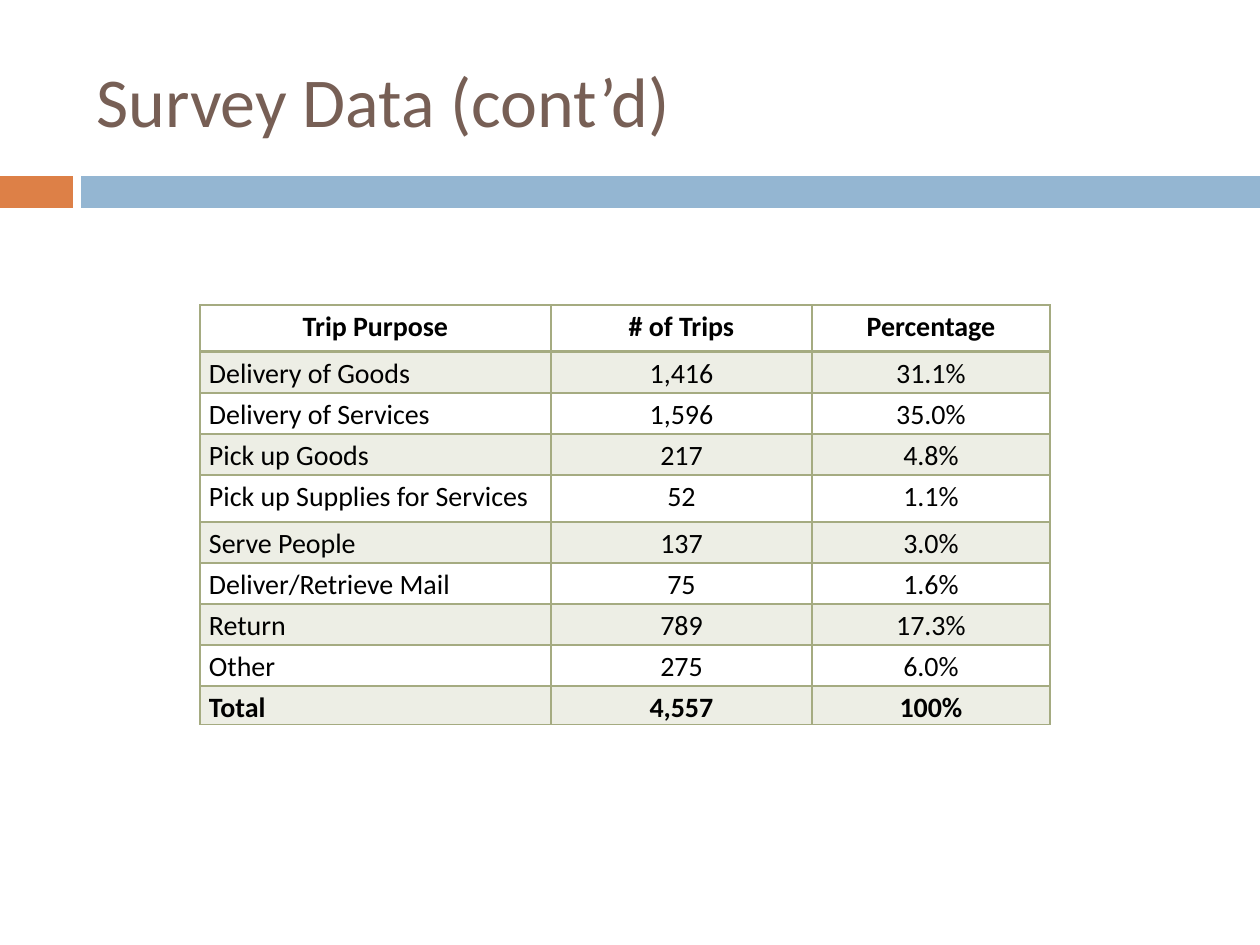
from lxml import etree
from pptx import Presentation
from pptx import util as u
from pptx.dml.color import RGBColor
from pptx.enum import shapes, text
from pptx.oxml import ns

PX_PER_INCH = 126
OLIVE = "A5AB81"
TRIPS = [
    ("Trip Purpose", "# of Trips", "Percentage"),
    ("Delivery of Goods", "1,416", "31.1%"),
    ("Delivery of Services", "1,596", "35.0%"),
    ("Pick up Goods", "217", "4.8%"),
    ("Pick up Supplies for Services", "52", "1.1%"),
    ("Serve People", "137", "3.0%"),
    ("Deliver/Retrieve Mail", "75", "1.6%"),
    ("Return", "789", "17.3%"),
    ("Other", "275", "6.0%"),
    ("Total", "4,557", "100%"),
]
COLUMN_WIDTHS = [351, 261, 238]
ROW_HEIGHTS = [47, 41, 41, 41, 47, 41, 41, 41, 41, 39]


def px(length):
    return u.Emu(round(length * 914400 / PX_PER_INCH))


def color(value):
    return RGBColor.from_string(value)


def assign(target, values):
    for name, value in values.items():
        setattr(target, name, value)


def write(frame, words, size, ink, frame_format, paragraph_format, bold=False):
    assign(frame, frame_format)
    paragraph = frame.paragraphs[0]
    assign(paragraph, paragraph_format)
    run = paragraph.add_run()
    run.text = words
    assign(run.font, {"name": "Calibri", "size": u.Pt(size), "bold": bold})
    run.font.color.rgb = color(ink)


def add_title(slide, left, top, width, height):
    title = slide.shapes.add_textbox(*map(px, (left, top, width, height)))
    write(title.text_frame, "Survey Data (cont’d)", 40, "775F55",
          {"word_wrap": True, "vertical_anchor": text.MSO_ANCHOR.MIDDLE},
          {"alignment": text.PP_ALIGN.LEFT})


def add_band(slide, left, top, width, height):
    accent_width, gap = 73, 8
    stripe_left = accent_width + gap
    stripes = [(0, accent_width, "DD8047"),
               (stripe_left, width - stripe_left, "94B6D2")]
    for offset, stripe_width, fill in stripes:
        stripe = slide.shapes.add_shape(
            shapes.MSO_SHAPE.RECTANGLE,
            *map(px, (left + offset, top, stripe_width, height)))
        stripe.shadow.inherit = False
        stripe.fill.solid()
        stripe.fill.fore_color.rgb = color(fill)
        stripe.line.fill.background()


def add_borders(cell, weights):
    properties = cell._tc.get_or_add_tcPr()
    for side, weight in weights.items():
        border = etree.SubElement(properties, ns.qn(f"a:ln{side}"),
                                  w=str(u.Pt(weight)))
        fill = etree.SubElement(border, ns.qn("a:solidFill"))
        etree.SubElement(fill, ns.qn("a:srgbClr"), val=OLIVE)


def shade(cell, banded):
    if not banded:
        cell.fill.background()
        return
    cell.fill.solid()
    cell.fill.fore_color.rgb = color(OLIVE)
    tint = cell._tc.tcPr.find(".//" + ns.qn("a:solidFill") + "[last()]")
    tint = cell._tc.tcPr.find(ns.qn("a:solidFill")).find(ns.qn("a:srgbClr"))
    etree.SubElement(tint, ns.qn("a:alpha"), val="20000")


def add_trip_table(slide, left, top):
    box = (left, top, sum(COLUMN_WIDTHS), sum(ROW_HEIGHTS))
    table = slide.shapes.add_table(
        len(TRIPS), len(COLUMN_WIDTHS), *map(px, box)).table
    assign(table, {"first_row": False, "horz_banding": False})
    for column, width in zip(table.columns, COLUMN_WIDTHS):
        column.width = px(width)
    for row, height in zip(table.rows, ROW_HEIGHTS):
        row.height = px(height)
    last = len(TRIPS) - 1
    for r, trip in enumerate(TRIPS):
        for c, words in enumerate(trip):
            cell = table.cell(r, c)
            assign(cell, {"margin_left": px(9), "margin_right": px(9),
                          "margin_top": 0, "margin_bottom": 0})
            add_borders(cell, {"L": 1, "R": 1, "T": 2 if r == 1 else 1,
                               "B": 2 if r == 0 else 1})
            shade(cell, r % 2 == 1)
            centred = r == 0 or c > 0
            alignment = text.PP_ALIGN.CENTER if centred else text.PP_ALIGN.LEFT
            write(cell.text_frame, words, 16, "000000", {},
                  {"alignment": alignment, "line_spacing": 1.15},
                  bold=r in (0, last))


def main():
    deck = Presentation()
    assign(deck, {"slide_width": px(1260), "slide_height": px(945)})
    slide = deck.slides.add_slide(deck.slide_layouts[6])
    add_band(slide, 0, 176, 1260, 32)
    add_title(slide, 84, 32, 1124, 136)
    add_trip_table(slide, 200, 305)
    deck.save("out.pptx")


if __name__ == "__main__":
    main()
